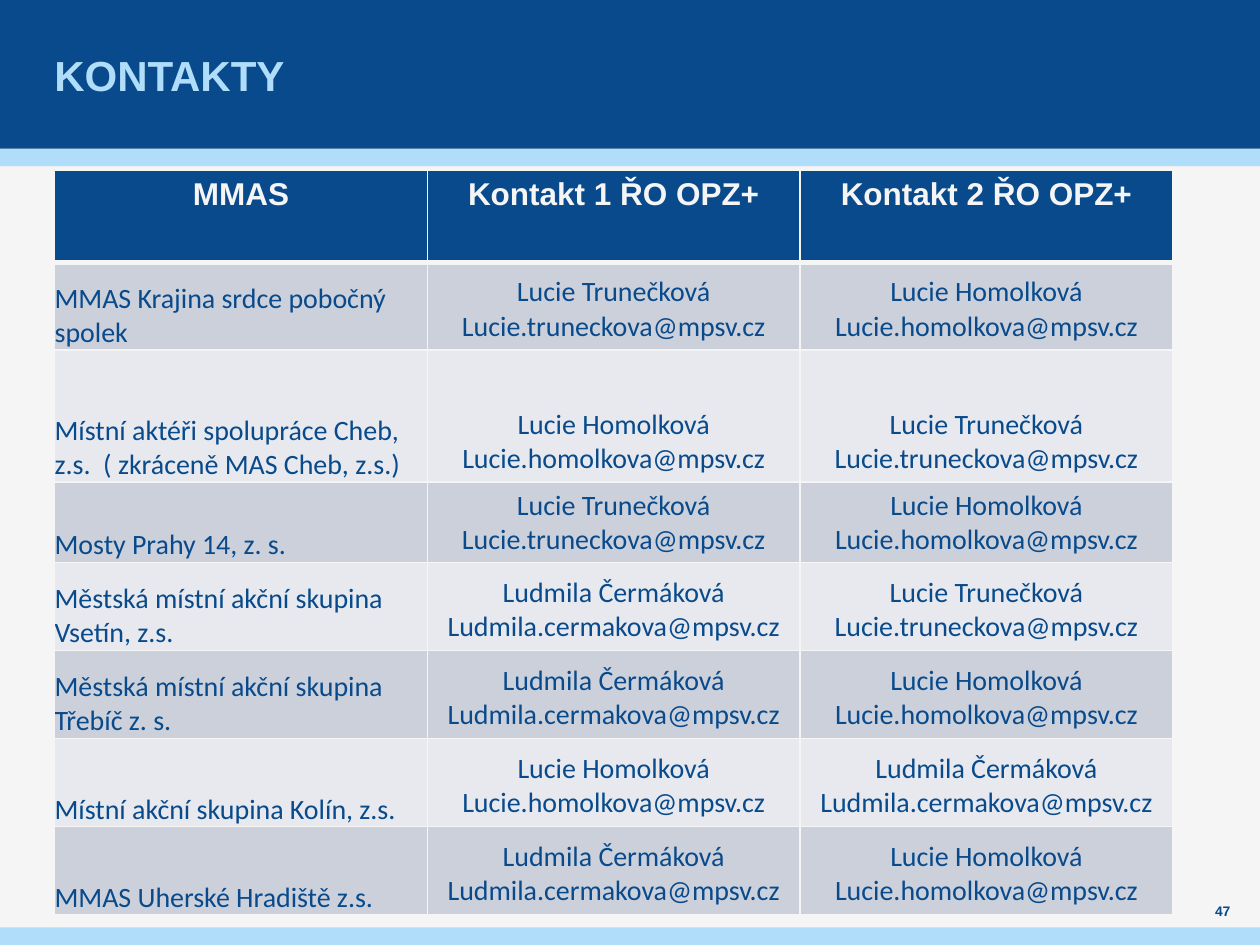
import pptx
import pptx.util
import pptx.dml.color
import pptx.enum.shapes
import pptx.enum.text
import pptx.oxml

Pt = pptx.util.Pt
RGB = pptx.dml.color.RGBColor
Align = pptx.enum.text.PP_ALIGN
Anchor = pptx.enum.text.MSO_ANCHOR

NAVY = RGB(0x08, 0x4A, 0x8B)
SKY = RGB(0xAF, 0xDD, 0xFA)
PALE = RGB(0xF5, 0xF5, 0xF5)
DARK = RGB(0xCC, 0xD0, 0xDA)
LIGHT = RGB(0xE7, 0xE9, 0xEE)
NS = "http://schemas.openxmlformats.org/drawingml/2006/main"

TRUN = ("Lucie Trunečková", "Lucie.truneckova@mpsv.cz")
HOMOL = ("Lucie Homolková", "Lucie.homolkova@mpsv.cz")
CERM = ("Ludmila Čermáková", "Ludmila.cermakova@mpsv.cz")

HEADS = ["MMAS", "Kontakt 1 ŘO OPZ+", "Kontakt 2 ŘO OPZ+"]
GROUPS = [
    ("MMAS Krajina srdce pobočný spolek", TRUN, HOMOL),
    ("Místní aktéři spolupráce Cheb, z.s.  ( zkráceně MAS Cheb, z.s.)", HOMOL, TRUN),
    ("Mosty Prahy 14, z. s.", TRUN, HOMOL),
    ("Městská místní akční skupina Vsetín, z.s.", CERM, TRUN),
    ("Městská místní akční skupina Třebíč z. s.", CERM, HOMOL),
    ("Místní akční skupina Kolín, z.s.", HOMOL, CERM),
    ("MMAS Uherské Hradiště z.s.", CERM, HOMOL),
]
HEIGHTS = [52.5, 50, 75.5, 46, 50.3, 50.3, 50.3, 50.3]


def write(frame, lines, size, color, face="Arial", bold=True, align=Align.LEFT):
    for i, line in enumerate(lines):
        para = frame.paragraphs[0] if i == 0 else frame.add_paragraph()
        para.alignment = align
        run = para.add_run()
        run.text = line
        run.font.size = Pt(size)
        run.font.name = face
        run.font.bold = bold
        run.font.color.rgb = color


def edge(cell, row):
    """Draw the cell borders, with a thick line under the head row."""
    props = cell._tc.get_or_add_tcPr()
    thick = {(0, "B"), (1, "T")}
    for side in "LRTB":
        width = Pt(3 if (row, side) in thick else 1)
        props.append(pptx.oxml.parse_xml(
            f'<a:ln{side} xmlns:a="{NS}" w="{width}"><a:solidFill>'
            f'<a:srgbClr val="{PALE}"/></a:solidFill></a:ln{side}>'))


deck = pptx.Presentation()
deck.slide_width, deck.slide_height = Pt(720), Pt(540)
slide = deck.slides.add_slide(deck.slide_layouts[5])
slide.background.fill.solid()
slide.background.fill.fore_color.rgb = PALE

# Bands
for top, height, color in [(85, 10, SKY), (0, 85, NAVY), (530, 10, SKY)]:
    band = slide.shapes.add_shape(
        pptx.enum.shapes.MSO_SHAPE.RECTANGLE, 0, Pt(top), Pt(720), Pt(height))
    band.shadow.inherit = False
    band.fill.solid()
    band.fill.fore_color.rgb = color
    band.line.fill.background()

# Title, brought in front of the bands
title = slide.shapes.title
slide.shapes.element.append(title.element)
title.left, title.top, title.width, title.height = Pt(28), Pt(0), Pt(663), Pt(85)
frame = title.text_frame
frame.margin_left = frame.margin_right = Pt(3)
frame.margin_top = frame.margin_bottom = 0
frame.vertical_anchor = Anchor.MIDDLE
write(frame, ["KONTAKTY"], 24, SKY)

# Page number
page = slide.shapes.add_textbox(Pt(680.4), Pt(513.2), Pt(36.6), Pt(14.4))
frame = page.text_frame
frame.word_wrap = True
frame.margin_left = frame.margin_right = frame.margin_top = frame.margin_bottom = 0
frame.vertical_anchor = Anchor.MIDDLE
write(frame, ["47"], 7.9, NAVY, align=Align.CENTER)

# Contacts
table = slide.shapes.add_table(
    len(HEIGHTS), 3, Pt(31.2), Pt(97.5), Pt(639), Pt(sum(HEIGHTS))).table
for col in table.columns:
    col.width = Pt(213)
for row, height in zip(table.rows, HEIGHTS):
    row.height = Pt(height)

for c, head in enumerate(HEADS):
    cell = table.cell(0, c)
    edge(cell, 0)
    cell.fill.solid()
    cell.fill.fore_color.rgb = NAVY
    write(cell.text_frame, [head], 18, PALE, align=Align.CENTER)

for r, (group, *people) in enumerate(GROUPS, 1):
    for c, lines in enumerate([(group,), *people]):
        cell = table.cell(r, c)
        edge(cell, r)
        cell.fill.solid()
        cell.fill.fore_color.rgb = DARK if r % 2 else LIGHT
        cell.vertical_anchor = Anchor.BOTTOM
        if c == 0:
            cell.margin_left = cell.margin_right = 0
            cell.margin_top = cell.margin_bottom = 0
        write(cell.text_frame, lines, 16, NAVY, "Calibri", False,
              Align.CENTER if c else Align.LEFT)

deck.save("out.pptx")
